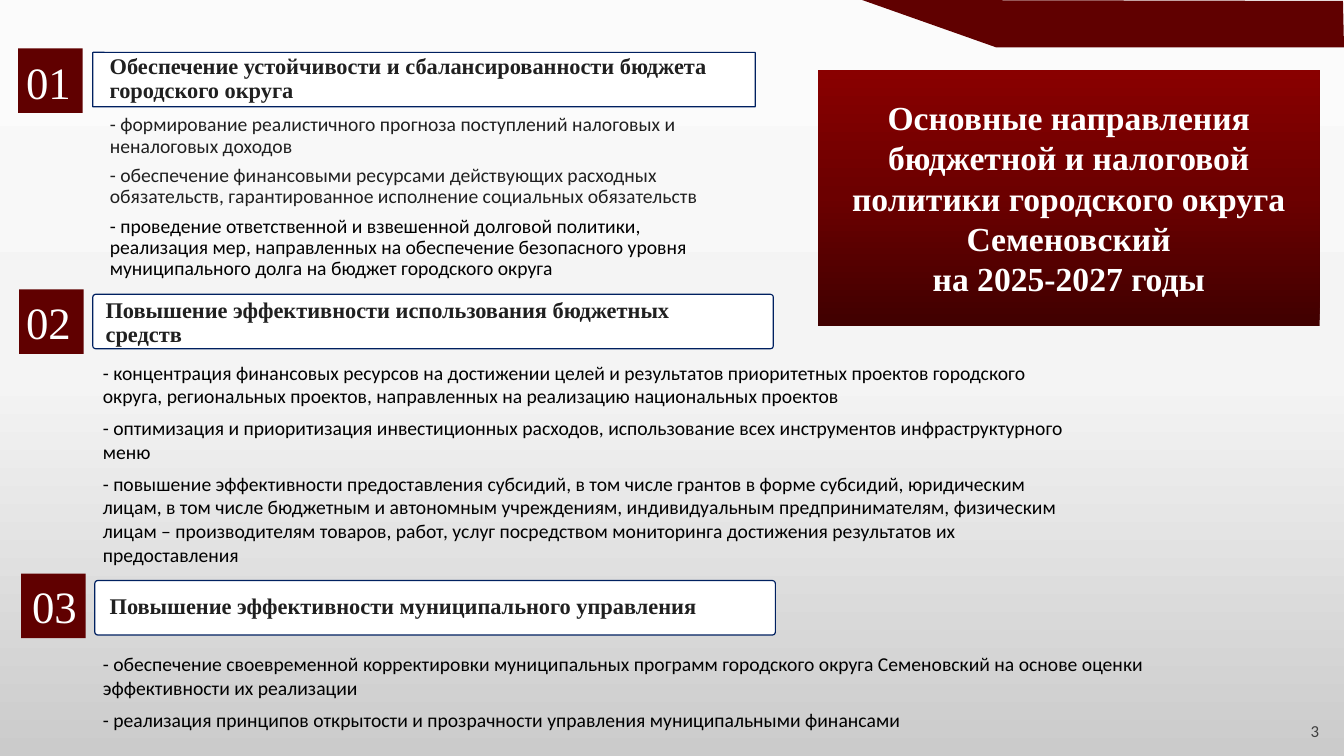
"""Builds the slide on the main directions of budget and tax policy."""
from dataclasses import dataclass

from copy import deepcopy
from lxml.etree import SubElement
from pptx import Presentation
from pptx.dml.color import RGBColor
from pptx.dml.fill import FillFormat
from pptx.enum.shapes import MSO_SHAPE
from pptx.enum.text import MSO_ANCHOR, MSO_AUTO_SIZE, PP_ALIGN
from pptx.oxml.ns import qn
from pptx.shapes.base import BaseShape
from pptx.slide import Slide
from pptx.util import Inches, Pt

Box = tuple[float, float, float, float]
Stops = tuple[tuple[float, str], ...]


@dataclass(frozen=True)
class Theme:
    serif: str = "Times New Roman"
    sans: str = "Calibri"
    accent: str = "600000"
    frame: str = "002060"
    white: str = "FFFFFF"
    dark: str = "202020"
    black: str = "000000"
    grey: str = "3F3F3F"
    title_size: int = 24
    number_size: int = 32
    heading_size: int = 16
    body_size: int = 14
    page_size: int = 12
    background: Stops = ((0, "FBFBFB"), (0.5, "F4F4F4"), (1, "CBCBCB"))
    panel: Stops = ((0, "400000"), (0.51, "6C0000"), (1, "890000"))


@dataclass(frozen=True)
class Style:
    font: str
    size: int
    color: str
    bold: bool = False
    align: PP_ALIGN = PP_ALIGN.LEFT
    indent: float = 0
    spacing: float = 1
    before: int = 0
    after: int = 0


@dataclass(frozen=True)
class Section:
    number: str
    square: tuple[float, float]
    number_box: Box
    frame: Box
    rounding: float
    heading: str
    heading_box: Box
    body_box: Box
    body_style: Style
    items: tuple[str, ...]


T = Theme()
SQUARE = 0.64
TITLE = Style(T.serif, T.title_size, T.white, True, PP_ALIGN.CENTER)
NUMBER = Style(T.serif, T.number_size, T.white)
HEADING = Style(T.serif, T.heading_size, T.dark, True, indent=0.17, spacing=0.9)
COMPACT = Style(T.sans, T.body_size, T.dark, indent=0.17, spacing=0.9, after=6)
LIST = Style(T.sans, T.body_size, T.black, before=6)
PAGE = Style(T.sans, T.page_size, T.grey, spacing=0.9)
RIBBON = ((13.32, 0.01), (8.55, 0), (9.88, 0.47), (13.33, 0.47))

SECTIONS = (
    Section(
        "01", (0.18, 0.48), (0.16, 0.49, 0.7, 0.64), (0.92, 0.52, 6.57, 0.54), 0.007,
        "Обеспечение устойчивости и сбалансированности бюджета городского округа",
        (0.82, 0.5, 6.67, 0.59), (0.82, 1.09, 6.57, 1.75), COMPACT,
        ("- формирование реалистичного прогноза поступлений налоговых и неналоговых доходов",
         "- обеспечение финансовыми ресурсами действующих расходных обязательств, "
         "гарантированное исполнение социальных обязательств",
         "- проведение ответственной и взвешенной долговой политики, реализация мер, "
         "направленных на обеспечение безопасного уровня муниципального долга на бюджет "
         "городского округа")),
    Section(
        "02", (0.19, 2.87), (0.16, 2.87, 0.72, 0.64), (0.92, 2.92, 6.75, 0.54), 0.056,
        "Повышение эффективности использования бюджетных средств",
        (0.78, 2.92, 6.67, 0.59), (0.92, 3.53, 9.86, 2.15), LIST,
        ("- концентрация финансовых ресурсов на достижении целей и результатов приоритетных "
         "проектов городского округа, региональных проектов, направленных на реализацию "
         "национальных проектов",
         "- оптимизация и приоритизация инвестиционных расходов, использование всех "
         "инструментов инфраструктурного меню",
         "- повышение эффективности предоставления субсидий, в том числе грантов в форме "
         "субсидий, юридическим лицам, в том числе бюджетным и автономным учреждениям, "
         "индивидуальным предпринимателям, физическим лицам – производителям товаров, "
         "работ, услуг посредством мониторинга достижения результатов их предоставления")),
    Section(
        "03", (0.21, 5.69), (0.22, 5.69, 0.7, 0.64), (0.94, 5.76, 6.75, 0.54), 0.056,
        "Повышение эффективности муниципального управления",
        (0.82, 5.86, 6.67, 0.34), (0.92, 6.42, 11.5, 0.89), LIST,
        ("- обеспечение своевременной корректировки муниципальных программ городского округа "
         "Семеновский на основе оценки эффективности их реализации",
         "- реализация принципов открытости и прозрачности управления муниципальными "
         "финансами")),
)


def rgb(color: str) -> RGBColor:
    return RGBColor.from_string(color)


def set_gradient(fill: FillFormat, stops: Stops, angle: int) -> None:
    fill.gradient()
    fill.gradient_angle = angle
    first = fill.gradient_stops[0]._gs
    first.addnext(deepcopy(first))
    for stop, (position, color) in zip(fill.gradient_stops, stops):
        stop.position = position
        stop.color.rgb = rgb(color)


def place(sp: BaseShape, box: Box) -> None:
    sp.left, sp.top, sp.width, sp.height = map(Inches, box)


def write(sp: BaseShape, lines: tuple[str, ...], style: Style,
          anchor: MSO_ANCHOR = MSO_ANCHOR.TOP) -> None:
    tf = sp.text_frame
    tf.text = "\n".join(lines)
    tf.word_wrap = True
    tf.auto_size = MSO_AUTO_SIZE.NONE
    tf.vertical_anchor = anchor
    for i, p in enumerate(tf.paragraphs):
        pPr = p._p.get_or_add_pPr()
        pPr.set("marL", str(Inches(style.indent)))
        pPr.set("indent", "0")
        SubElement(pPr, qn("a:buNone"))
        p.alignment = style.align
        p.line_spacing = style.spacing
        p.space_before = Pt(style.before if i else 0)
        p.space_after = Pt(style.after)
        for r in p.runs:
            r.font.name = style.font
            r.font.size = Pt(style.size)
            r.font.bold = style.bold
            r.font.color.rgb = rgb(style.color)


def add_text(s: Slide, box: Box, text: str, style: Style) -> None:
    write(s.shapes.add_textbox(*map(Inches, box)), (text,), style)


def paint(sp: BaseShape, fill: str, line: str | None = None) -> None:
    sp.shadow.inherit = False
    sp.fill.solid()
    sp.fill.fore_color.rgb = rgb(fill)
    if line:
        sp.line.color.rgb = rgb(line)
        sp.line.width = Pt(0.85)
    else:
        sp.line.fill.background()


def add_section(s: Slide, section: Section, body: BaseShape) -> None:
    frame = s.shapes.add_shape(MSO_SHAPE.ROUNDED_RECTANGLE, *map(Inches, section.frame))
    frame.adjustments[0] = section.rounding
    paint(frame, T.white, T.frame)
    square = (*section.square, SQUARE, SQUARE)
    paint(s.shapes.add_shape(MSO_SHAPE.RECTANGLE, *map(Inches, square)), T.accent)
    add_text(s, section.number_box, section.number, NUMBER)
    add_text(s, section.heading_box, section.heading, HEADING)
    place(body, section.body_box)
    write(body, section.items, section.body_style)


def main() -> None:
    prs = Presentation()
    prs.slide_width, prs.slide_height = Inches(13.33), Inches(7.5)
    s = prs.slides.add_slide(prs.slide_layouts.get_by_name("Comparison"))
    set_gradient(s.background.fill, T.background, 270)

    start, *rest = [(Inches(x), Inches(y)) for x, y in RIBBON]
    ribbon = s.shapes.build_freeform(*start)
    ribbon.add_line_segments(rest, close=True)
    paint(ribbon.convert_to_shape(), T.accent)

    title, *bodies, spare = s.placeholders
    spare.element.getparent().remove(spare.element)
    place(title, (8.11, 0.69, 4.98, 2.54))
    set_gradient(title.fill, T.panel, 90)
    write(title, ("Основные направления бюджетной и налоговой политики городского округа "
                  "Семеновский", "на 2025-2027 годы"), TITLE, MSO_ANCHOR.MIDDLE)

    for section, body in zip(SECTIONS, bodies):
        add_section(s, section, body)
    last_run = bodies[0].text_frame.paragraphs[-1].runs[0]
    last_run.font.color.rgb = rgb(T.black)
    add_text(s, (12.9, 7.12, 0.39, 0.4), "3", PAGE)
    prs.save("out.pptx")


if __name__ == "__main__":
    main()
